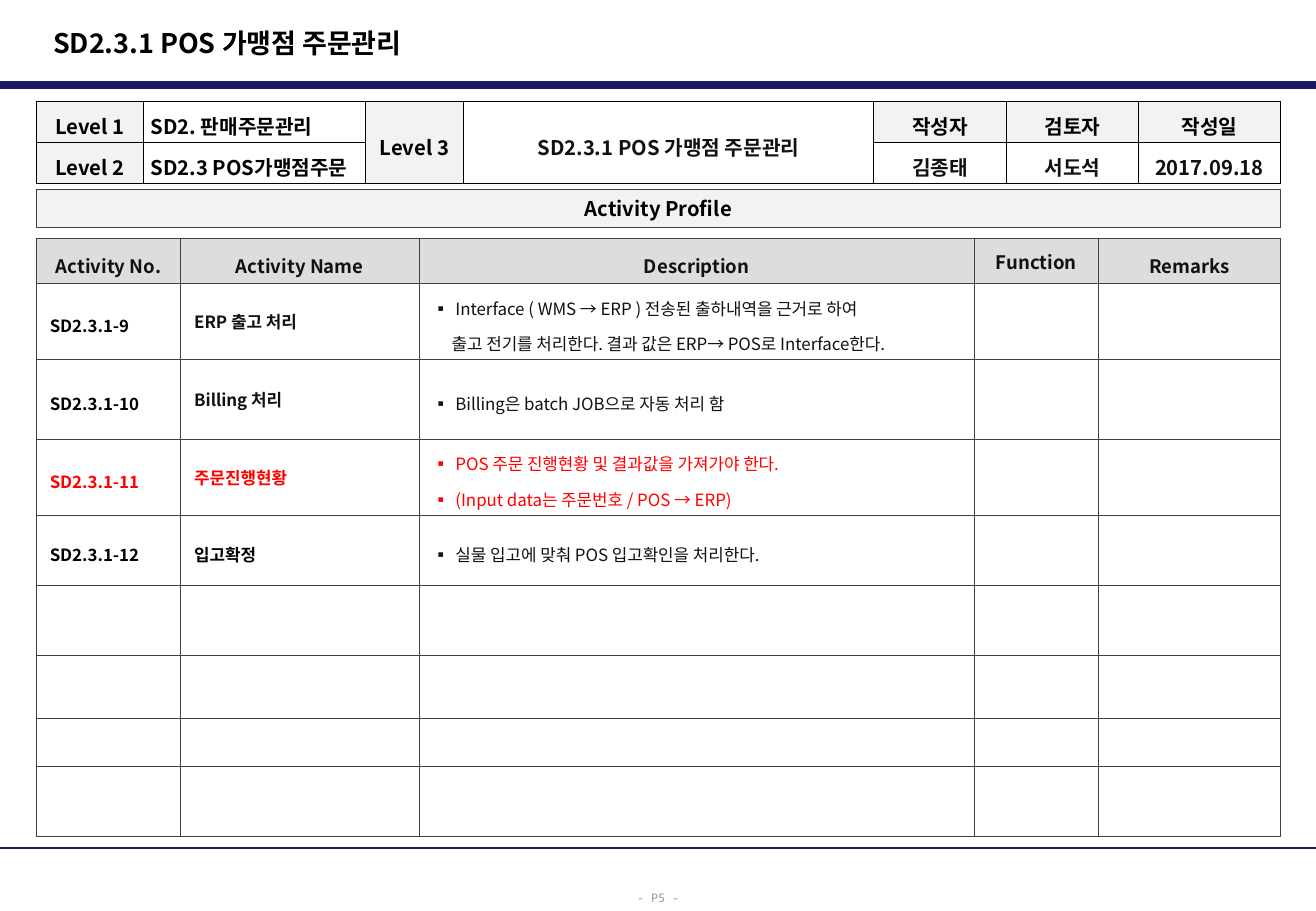
from pptx import Presentation
from pptx.dml.color import RGBColor
from pptx.enum.shapes import MSO_CONNECTOR as Connector, MSO_SHAPE as Preset
from pptx.enum.text import MSO_ANCHOR as Anchor, PP_ALIGN as Align
from pptx.oxml.ns import qn
from pptx.util import Cm, Pt
from lxml.etree import SubElement, Element
from dataclasses import dataclass


@dataclass(frozen=True)
class Theme:
    font: str = "Noto Sans CJK KR"
    mono: str = "Noto Sans Mono"
    navy: str = "191966"
    black: str = "000000"
    ink: str = "111111"
    red: str = "FF0000"
    gray: str = "969696"
    border: str = "404040"
    pale: str = "F2F2F2"
    header: str = "DDDDDD"
    title: float = 16
    label: float = 12
    heading: float = 11
    body: float = 10
    footer: float = 7
    loose: float = 1.3


theme = Theme()
TITLE = "SD2.3.1 POS 가맹점 주문관리"
PROFILE = "Activity Profile"
FOOTER = "- P5 -"
LEVELS = [
    ["Level 1", "SD2. 판매주문관리", "Level 3", TITLE, "작성자", "검토자", "작성일"],
    ["Level 2", "SD2.3 POS가맹점주문", "", "", "김종태", "서도석", "2017.09.18"],
]
SHADED = {(0, 0), (1, 0), (0, 2), (1, 2), (0, 4), (0, 5), (0, 6)}
INKED = {(0, 3), (1, 4), (1, 5), (1, 6)}
HEADINGS = ["Activity No.", "Activity Name", "Description", "Function", "Remarks"]
ACTIVITIES = [
    ("SD2.3.1-9", "ERP 출고 처리", 1.0, theme.ink,
     [("Interface ( WMS → ERP ) 전송된 출하내역을 근거로 하여", True),
      ("출고 전기를 처리한다. 결과 값은 ERP→ POS로 Interface한다.", False)]),
    ("SD2.3.1-10", "Billing 처리", 1.0, theme.ink,
     [("Billing은 batch JOB으로 자동 처리 함", True)]),
    ("SD2.3.1-11", "주문진행현황", 1.0, theme.red,
     [("POS 주문 진행현황 및 결과값을 가져가야 한다.", True),
      ("(Input data는 주문번호 / POS → ERP)", True)]),
    ("SD2.3.1-12", "입고확정", theme.loose, theme.black,
     [("실물 입고에 맞춰 POS 입고확인을 처리한다.", True)]),
]
LEVEL_COLUMNS = [2.24, 4.64, 2.05, 8.57, 2.78, 2.76, 2.97]
LEVEL_ROWS = [0.86, 0.86]
ACTIVITY_COLUMNS = [3.02, 4.98, 11.61, 2.59, 3.81]
ACTIVITY_ROWS = [0.94, 1.59, 1.67, 1.59, 1.46, 1.46, 1.32, 1.0, 1.46]
LEFT, WIDTH, PAGE_WIDTH, PAGE_HEIGHT = 0.76, 26.01, 27.51, 19.05


def style(para, size, color, bold=True, spacing=1.0, align=Align.LEFT, font=theme.font):
    para.alignment = align
    para.line_spacing = spacing
    for span in para.runs:
        span.font.size = Pt(size)
        span.font.bold = bold
        span.font.color.rgb = RGBColor.from_string(color)
        span.font.name = font
        SubElement(span.font._element, qn("a:ea"), typeface=font)


def add_bullet(para):
    props = para._p.get_or_add_pPr()
    props.set("marL", str(Cm(0.48)))
    props.set("indent", str(Cm(-0.48)))
    SubElement(props, qn("a:buFont"), typeface=theme.font)
    SubElement(props, qn("a:buChar"), char="▪")


def add_text(page, text, left, top, width, height, size, color, **options):
    box = page.shapes.add_textbox(Cm(left), Cm(top), Cm(width), Cm(height))
    box.text_frame.word_wrap = True
    box.text_frame.vertical_anchor = Anchor.MIDDLE
    box.text_frame.text = text
    style(box.text_frame.paragraphs[0], size, color, **options)


def add_rule(page, top, weight):
    rule = page.shapes.add_connector(Connector.STRAIGHT, 0, Cm(top), Cm(PAGE_WIDTH), Cm(top))
    rule.line.color.rgb = RGBColor.from_string(theme.navy)
    rule.line.width = Pt(weight)
    SubElement(rule._element.spPr, qn("a:effectLst"))


def add_grid(page, top, columns, rows, border, margins):
    frame = page.shapes.add_table(len(rows), len(columns), Cm(LEFT), Cm(top),
                                  Cm(WIDTH), Cm(sum(rows)))
    table = frame.table
    table.first_row = table.horz_banding = False
    for column, width in zip(table.columns, columns):
        column.width = Cm(width)
    for row, height in zip(table.rows, rows):
        row.height = Cm(height)
    for cell in table.iter_cells():
        cell.vertical_anchor = Anchor.MIDDLE
        cell.margin_left = cell.margin_right = Cm(margins[0])
        cell.margin_top = cell.margin_bottom = Cm(margins[1])
        cell.fill.background()
        props = cell._tc.get_or_add_tcPr()
        for index, side in enumerate(("lnL", "lnR", "lnT", "lnB")):
            edge = Element(qn(f"a:{side}"), w=str(Pt(0.5)))
            SubElement(SubElement(edge, qn("a:solidFill")), qn("a:srgbClr"), val=border)
            props.insert(index, edge)
    return table


def shade(item, color):
    item.fill.solid()
    item.fill.fore_color.rgb = RGBColor.from_string(color)


def write(cell, text, size, color, **options):
    cell.text_frame.text = text
    style(cell.text_frame.paragraphs[0], size, color, **options)


def add_levels(page):
    table = add_grid(page, 2.11, LEVEL_COLUMNS, LEVEL_ROWS, theme.black, (0.15, 0.03))
    for r, labels in enumerate(LEVELS):
        for c, label in enumerate(labels):
            cell = table.cell(r, c)
            if (r, c) in SHADED:
                shade(cell, theme.pale)
            if label:
                write(cell, label, theme.label, theme.ink if (r, c) in INKED else theme.black,
                      spacing=theme.loose, align=Align.LEFT if c == 1 else Align.CENTER)
    for c in (2, 3):
        table.cell(0, c).merge(table.cell(1, c))


def add_profile(page):
    bar = page.shapes.add_shape(Preset.RECTANGLE, Cm(LEFT), Cm(3.96), Cm(WIDTH), Cm(0.79))
    bar.shadow.inherit = False
    shade(bar, theme.pale)
    bar.line.color.rgb = RGBColor.from_string(theme.border)
    bar.line.width = Pt(0.5)
    bar.text_frame.word_wrap = False
    bar.text_frame.vertical_anchor = Anchor.MIDDLE
    write(bar, PROFILE, theme.label, theme.black, align=Align.CENTER)


def add_activities(page):
    table = add_grid(page, 4.99, ACTIVITY_COLUMNS, ACTIVITY_ROWS, theme.border, (0.28, 0.1))
    for c, heading in enumerate(HEADINGS):
        cell = table.cell(0, c)
        shade(cell, theme.header)
        write(cell, heading, theme.heading, theme.ink, align=Align.CENTER,
              spacing=1.0 if heading == "Function" else theme.loose)
    for r, (number, name, spacing, color, lines) in enumerate(ACTIVITIES, start=1):
        number_color = theme.red if color == theme.red else theme.black
        write(table.cell(r, 0), number, theme.body, number_color, spacing=theme.loose)
        write(table.cell(r, 1), name, theme.body, color, spacing=spacing)
        frame = table.cell(r, 2).text_frame
        frame.text = "\n".join(text for text, _ in lines)
        for index, (para, (_, bulleted)) in enumerate(zip(frame.paragraphs, lines)):
            style(para, theme.body, theme.red if color == theme.red else theme.ink,
                  bold=False, spacing=theme.loose)
            if index:
                para.space_before = Pt(2.5)
            if bulleted:
                add_bullet(para)
            else:
                para._p.get_or_add_pPr().set("marL", str(Cm(0.4)))
    for cell in table.iter_cells():
        if not cell.text_frame.text:
            SubElement(cell.text_frame.paragraphs[0]._p, qn("a:endParaRPr"),
                       sz=str(theme.body * 100))


def main():
    deck = Presentation()
    deck.slide_width, deck.slide_height = Cm(PAGE_WIDTH), Cm(PAGE_HEIGHT)
    page = deck.slides.add_slide(deck.slide_layouts[6])
    add_rule(page, 1.78, 4.5)
    add_text(page, FOOTER, 12.75, 18.42, 2.02, 0.64, theme.footer, theme.gray, bold=False,
             spacing=theme.loose, align=Align.CENTER, font=theme.mono)
    add_rule(page, 17.73, 1.5)
    add_text(page, TITLE, 0.86, 0.41, 18.06, 0.97, theme.title, theme.black)
    add_activities(page)
    add_profile(page)
    add_levels(page)
    deck.save("out.pptx")


if __name__ == "__main__":
    main()
